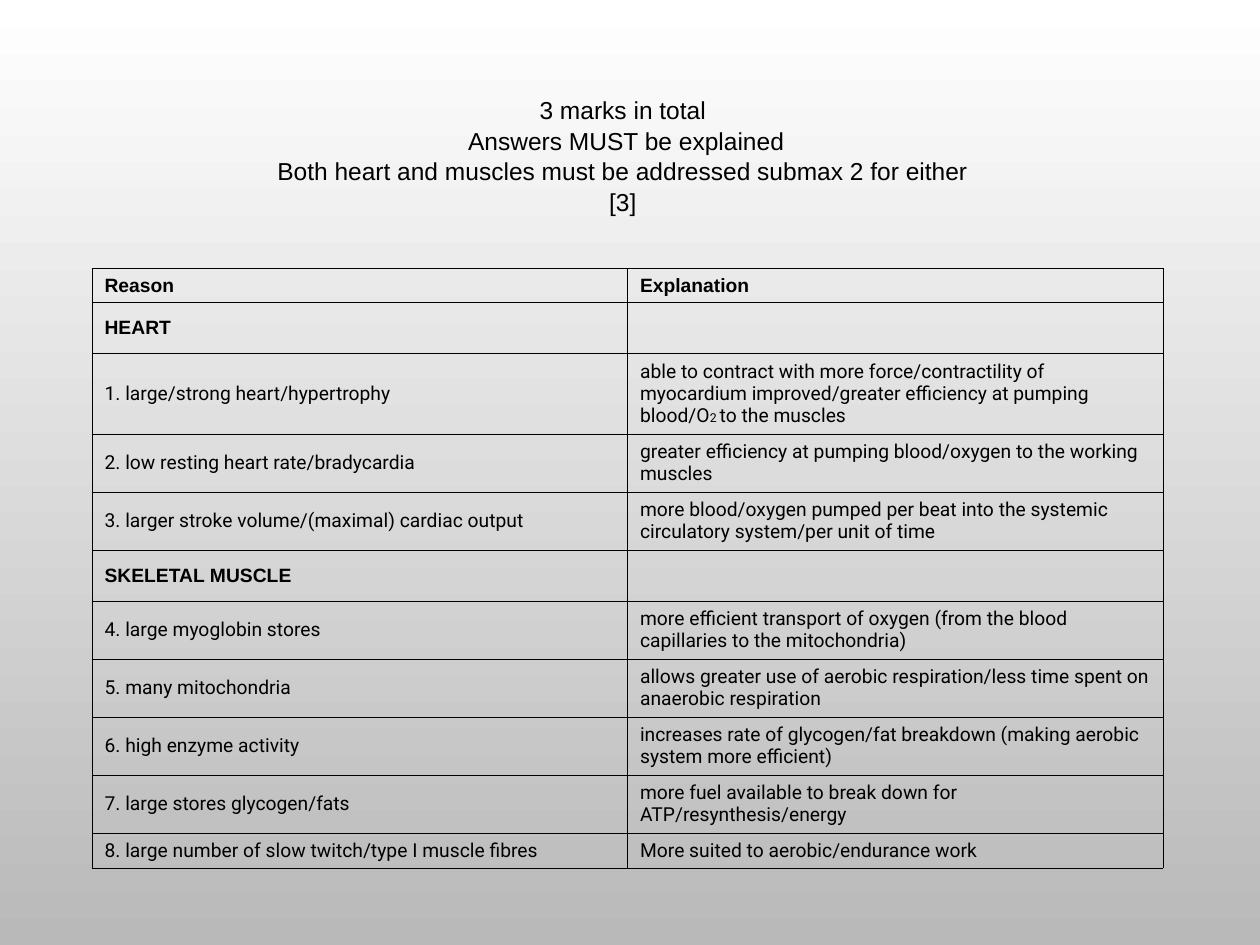
from pptx import Presentation
from pptx.dml.color import RGBColor
from pptx.enum.text import MSO_ANCHOR, MSO_AUTO_SIZE, PP_ALIGN
from pptx.oxml import parse_xml
from pptx.oxml.ns import nsdecls
from pptx.util import Inches, Pt

MIDDLE = MSO_ANCHOR.MIDDLE
COLOURS = {"text": "000000", "border": "000000", "top": "FFFFFF", "bottom": "B9B9B9"}
HEADING_FONT, BODY_FONT = "Arial", "Roboto"
TITLE_ONLY_LAYOUT = 5
BORDER_WIDTH = Pt(0.48)

TITLE_LINES = [
    "3 marks in total ",
    "Answers MUST be explained",
    "Both heart and muscles must be addressed submax 2 for either ",
    "[3] ",
]
# Row kind, reason, explanation; a tuple alternates normal and subscript-sized text.
ROWS = [
    ("header", "Reason", "Explanation"),
    ("section", "HEART", ""),
    ("three lines", "1. large/strong heart/hypertrophy",
     ("able to contract with more force/contractility of myocardium improved/"
      "greater efficiency at pumping blood/O", "2 ", "to the muscles")),
    ("two lines", "2. low resting heart rate/bradycardia",
     "greater efficiency at pumping blood/oxygen to the working muscles"),
    ("two lines", "3. larger stroke volume/(maximal) cardiac output",
     "more blood/oxygen pumped per beat into the systemic circulatory system/per unit of time"),
    ("section", "SKELETAL MUSCLE", ""),
    ("two lines", "4. large myoglobin stores",
     "more efficient transport of oxygen (from the blood capillaries to the mitochondria)"),
    ("two lines", "5. many mitochondria",
     "allows greater use of aerobic respiration/less time spent on anaerobic respiration"),
    ("two lines", "6. high enzyme activity",
     "increases rate of glycogen/fat breakdown (making aerobic system more efficient)"),
    ("two lines", "7. large stores glycogen/fats",
     "more fuel available to break down for ATP/resynthesis/energy"),
    ("one line", "8. large number of slow twitch/type I muscle fibres",
     "More suited to aerobic/endurance work"),
]
ROW_HEIGHTS = {"header": 0.27, "section": 0.4, "one line": 0.27,
               "two lines": 0.46, "three lines": 0.64}


def colour(name):
    return RGBColor.from_string(COLOURS[name])


def format_font(font, name, size, bold=False):
    font.name, font.size, font.bold = name, Pt(size), bold
    font.color.rgb = colour("text")


def add_borders(cell):
    properties = cell._tc.get_or_add_tcPr()
    for side in ("lnL", "lnR", "lnT", "lnB"):
        properties.append(parse_xml(
            f'<a:{side} {nsdecls("a")} w="{BORDER_WIDTH}"><a:solidFill>'
            f'<a:srgbClr val="{COLOURS["border"]}"/></a:solidFill></a:{side}>'))


def fill_cell(cell, content, is_heading):
    add_borders(cell)
    cell.fill.background()
    cell.vertical_anchor = MIDDLE
    if not content:
        return
    paragraph = cell.text_frame.paragraphs[0]
    pieces = (content,) if isinstance(content, str) else content
    for index, piece in enumerate(pieces):
        run = paragraph.add_run()
        run.text = piece
        format_font(run.font, HEADING_FONT if is_heading else BODY_FONT,
                    7 if index % 2 else 11, is_heading)


def set_background(slide):
    fill = slide.background.fill
    fill.gradient()
    fill.gradient_angle = 270
    for stop, position, name in zip(fill.gradient_stops, (0, 1), ("top", "bottom")):
        stop.position = position
        stop.color.rgb = colour(name)


def add_title(slide):
    title = slide.shapes.title
    title.left, title.top = Inches(0.72), Inches(0.68)
    title.width, title.height = Inches(8.5), Inches(1.1)
    frame = title.text_frame
    frame.auto_size = MSO_AUTO_SIZE.NONE
    frame.word_wrap = True
    frame.vertical_anchor = MIDDLE
    paragraph = frame.paragraphs[0]
    paragraph.text = "\v".join(TITLE_LINES)
    paragraph.alignment = PP_ALIGN.CENTER
    paragraph.line_spacing = 1.04
    for run in paragraph.runs:
        format_font(run.font, HEADING_FONT, 14)


def add_answer_table(slide):
    heights = [ROW_HEIGHTS[kind] for kind, *_ in ROWS]
    table = slide.shapes.add_table(len(ROWS), 2, Inches(0.73), Inches(2.13),
                                   Inches(8.5), Inches(sum(heights))).table
    table.first_row = table.horz_banding = False
    for row, height, (kind, *contents) in zip(table.rows, heights, ROWS):
        row.height = Inches(height)
        for cell, content in zip(row.cells, contents):
            fill_cell(cell, content, kind in ("header", "section"))


def main():
    presentation = Presentation()
    presentation.slide_width, presentation.slide_height = Inches(10), Inches(7.5)
    slide = presentation.slides.add_slide(presentation.slide_layouts[TITLE_ONLY_LAYOUT])
    set_background(slide)
    add_title(slide)
    add_answer_table(slide)
    presentation.save("out.pptx")


if __name__ == "__main__":
    main()
